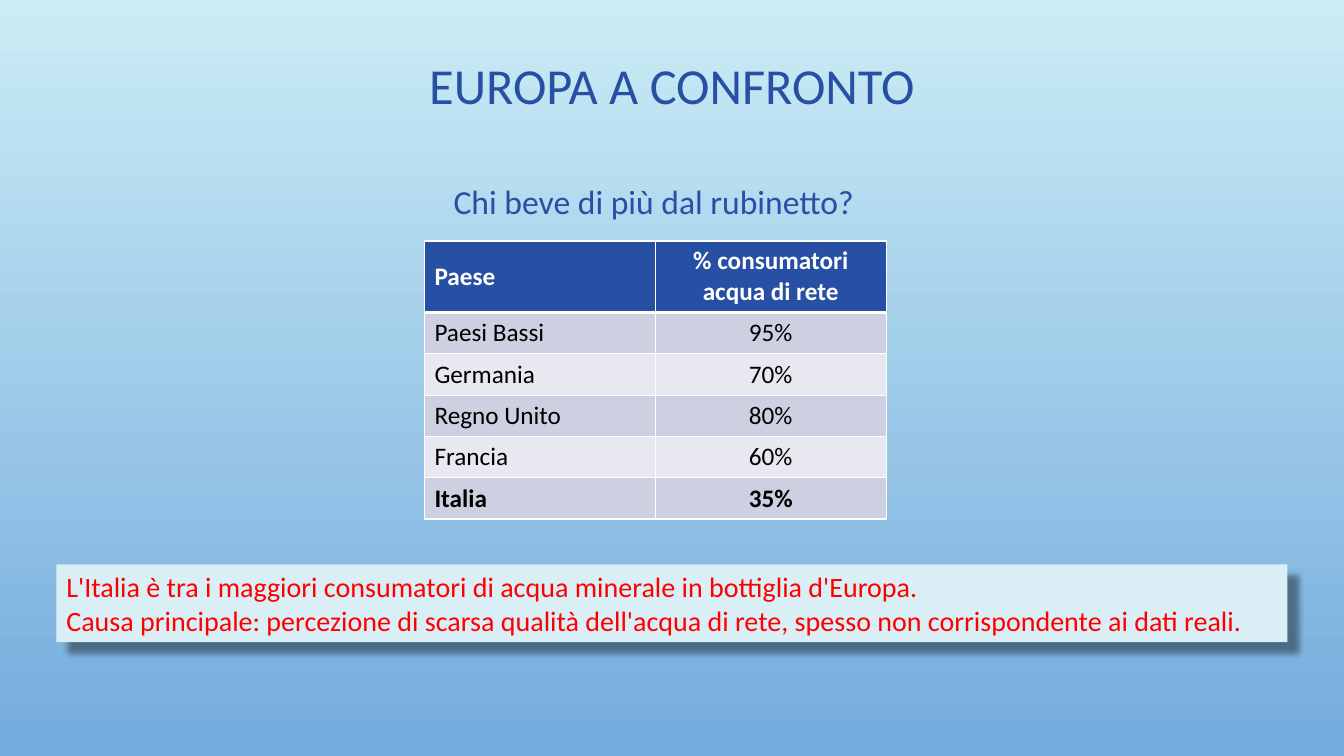
from lxml import etree
from pptx import Presentation
from pptx import util as u
from pptx.dml.color import RGBColor
from pptx.enum import shapes, text
from pptx.oxml.ns import qn

TITLE = "EUROPA A CONFRONTO"
QUESTION = "Chi beve di più dal rubinetto?"
ROWS = [
    ("Paese", "% consumatori acqua di rete"),
    ("Paesi Bassi", "95%"),
    ("Germania", "70%"),
    ("Regno Unito", "80%"),
    ("Francia", "60%"),
    ("Italia", "35%"),
]
CONCLUSIONS = [
    "L'Italia è tra i maggiori consumatori di acqua minerale in bottiglia d'Europa.",
    "Causa principale: percezione di scarsa qualità dell'acqua di rete, "
    "spesso non corrispondente ai dati reali.",
]
FONT = "Calibri"
BLUE, WHITE, BLACK, RED = "274FA4", "FFFFFF", "000000", "FF0000"
BANDS = ("E8E9F0", "CDD0E0")
NOTE_FILL = "DAEEF6"
BACKGROUND = ("CBECF5", "73ABDD")
COLUMN_WIDTH, HEADER_HEIGHT, ROW_HEIGHT = 2.29, 0.71, 0.41
LEFT, CENTER = text.PP_ALIGN.LEFT, text.PP_ALIGN.CENTER
MIDDLE, TOP = text.MSO_ANCHOR.MIDDLE, text.MSO_ANCHOR.TOP


def color(value):
    return RGBColor.from_string(value)


def box(left, top, width, height):
    return [u.Inches(value) for value in (left, top, width, height)]


def write(frame, lines, size, ink, align=LEFT, bold=False):
    for index, line in enumerate(lines):
        paragraph = frame.paragraphs[0] if index == 0 else frame.add_paragraph()
        paragraph.text = line
        paragraph.alignment = align
        font = paragraph.font
        font.name, font.size, font.bold = FONT, u.Pt(size), bold
        font.color.rgb = color(ink)


def add_text(slide, area, line, size, align, anchor, wrap):
    frame = slide.shapes.add_textbox(*box(*area)).text_frame
    frame.word_wrap = wrap
    frame.vertical_anchor = anchor
    write(frame, [line], size, BLUE, align)
    return frame


def add_color(parent, value):
    return etree.SubElement(parent, qn("a:srgbClr"), val=value)


def set_borders(cell, **widths):
    properties = cell._tc.get_or_add_tcPr()
    for side in "LRTB":
        width = u.Pt(widths.get(side, 1))
        line = etree.SubElement(properties, qn(f"a:ln{side}"), w=str(width))
        add_color(etree.SubElement(line, qn("a:solidFill")), WHITE)


def add_shadow(shape, opacity, blur, distance, angle):
    shape.shadow.inherit = False
    effects = shape._element.spPr.find(qn("a:effectLst"))
    shadow = etree.SubElement(
        effects, qn("a:outerShdw"), blurRad=str(u.Pt(blur)),
        dist=str(u.Pt(distance)), dir=str(angle * 60000),
        algn="tl", rotWithShape="0")
    etree.SubElement(add_color(shadow, BLACK), qn("a:alpha"), val=str(opacity * 1000))


def add_consumption_table(slide):
    last = len(ROWS) - 1
    height = HEADER_HEIGHT + last * ROW_HEIGHT
    area = box(4.21, 2.39, 2 * COLUMN_WIDTH, height)
    table = slide.shapes.add_table(len(ROWS), 2, *area).table
    for column in table.columns:
        column.width = u.Inches(COLUMN_WIDTH)
    for row, values in enumerate(ROWS):
        header = row == 0
        table.rows[row].height = u.Inches(HEADER_HEIGHT if header else ROW_HEIGHT)
        for column, value in enumerate(values):
            cell = table.cell(row, column)
            set_borders(cell, B=3 if header else 1, T=3 if row == 1 else 1)
            cell.fill.solid()
            cell.fill.fore_color.rgb = color(BLUE if header else BANDS[row % 2])
            cell.vertical_anchor = MIDDLE
            write(cell.text_frame, [value], 18, WHITE if header else BLACK,
                  CENTER if column else LEFT, row in (0, last))


def add_conclusions(slide):
    note = slide.shapes.add_shape(
        shapes.MSO_SHAPE.RECTANGLE, *box(0.56, 5.6, 12.21, 0.77))
    note.fill.solid()
    note.fill.fore_color.rgb = color(NOTE_FILL)
    note.line.fill.background()
    add_shadow(note, 40, 4, 11, 45)
    note.text_frame.word_wrap = True
    note.text_frame.vertical_anchor = TOP
    write(note.text_frame, CONCLUSIONS, 20, RED)


def main():
    presentation = Presentation()
    presentation.slide_width = u.Inches(13.33)
    presentation.slide_height = u.Inches(7.5)
    slide = presentation.slides.add_slide(presentation.slide_layouts[6])
    fill = slide.background.fill
    fill.gradient()
    fill.gradient_angle = 270
    for stop, value in zip(fill.gradient_stops, BACKGROUND):
        stop.color.rgb = color(value)

    title = add_text(slide, (1, 0, 11.33, 1.75), TITLE, 36, CENTER, MIDDLE, True)
    title.paragraphs[0].line_spacing = 0.9
    add_consumption_table(slide)
    add_text(slide, (4.4, 1.75, 4.19, 0.5), QUESTION, 24, LEFT, TOP, False)
    add_conclusions(slide)
    presentation.save("out.pptx")


if __name__ == "__main__":
    main()
